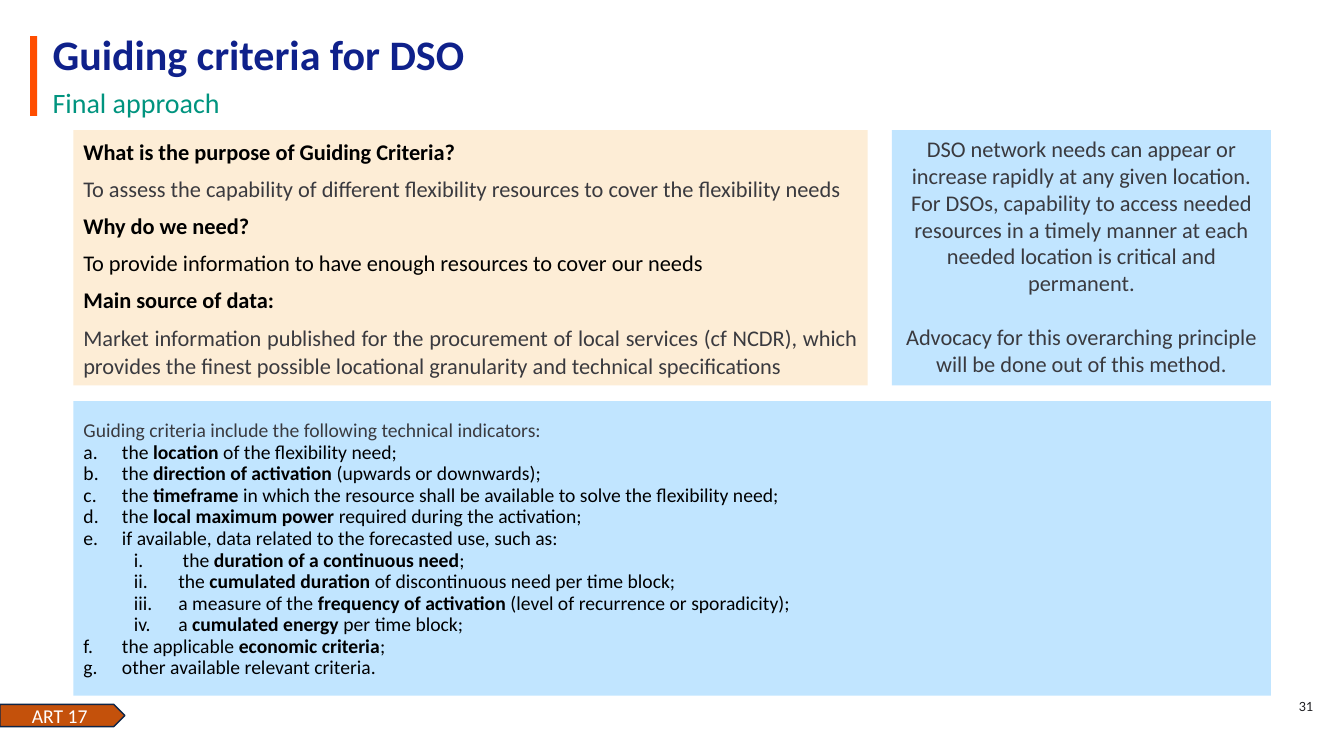
import pptx
import pptx.dml.color
import pptx.enum.shapes
import pptx.enum.text
import pptx.oxml
import pptx.oxml.ns
import pptx.util

Cm = pptx.util.Cm
Pt = pptx.util.Pt
Shape = pptx.enum.shapes.MSO_SHAPE
Align = pptx.enum.text.PP_ALIGN
Anchor = pptx.enum.text.MSO_ANCHOR

NAVY = "0F218B"
GREEN = "00947F"
GREY = "3A3A3F"
BLACK = "000000"
CREAM = "FDEDD6"
SKY = "C1E5FF"

PURPOSE = [
    ("*What is the purpose of Guiding Criteria?*", BLACK),
    ("To assess the capability of different flexibility resources to cover the flexibility needs", GREY),
    ("*Why do we need?*", BLACK),
    ("To provide information to have enough resources to cover our needs", BLACK),
    ("*Main source of data:*", BLACK),
    ("Market information published for the procurement of local services (cf NCDR), which provides "
     "the finest possible locational granularity and technical specifications", GREY),
]
NEEDS = [
    "DSO network needs can appear or increase rapidly at any given location.",
    "For DSOs, capability to access needed resources in a timely manner at each needed location "
    "is critical and permanent.",
    "Advocacy for this overarching principle will be done out of this method.",
]
INTRO = "Guiding criteria include the following technical indicators:"
ITEMS = [
    (0, "the *location* of the flexibility need;"),
    (0, "the *direction of activation* (upwards or downwards);"),
    (0, "the *timeframe* in which the resource shall be available to solve the flexibility need;"),
    (0, "the *local maximum power* required during the activation;"),
    (0, "if available, data related to the forecasted use, such as:"),
    (1, " the *duration of a continuous need*;"),
    (1, "the *cumulated duration* of discontinuous need per time block;"),
    (1, "a measure of the *frequency of activation* (level of recurrence or sporadicity);"),
    (1, "a *cumulated energy* per time block;"),
    (0, "the applicable *economic criteria*;"),
    (0, "other available relevant criteria."),
]
LEVELS = [("alphaLcPeriod", 0.97, -0.97), ("romanLcPeriod", 2.39, -1.12)]


def hue(code):
    return pptx.dml.color.RGBColor.from_string(code)


def place(shape, box):
    shape.left, shape.top, shape.width, shape.height = [Cm(n) for n in box]


def block(slide, kind, box, fill, line=None):
    shape = slide.shapes.add_shape(kind, *[Cm(n) for n in box])
    shape.shadow.inherit = False
    shape.fill.solid()
    shape.fill.fore_color.rgb = hue(fill)
    if line:
        shape.line.color.rgb = hue(line)
        shape.line.width = Pt(1)
    else:
        shape.line.fill.background()
    return shape


def setup(shape, anchor=Anchor.MIDDLE):
    frame = shape.text_frame
    frame.word_wrap = True
    frame.auto_size = pptx.enum.text.MSO_AUTO_SIZE.NONE
    frame.vertical_anchor = anchor
    return frame


def grow(frame, count):
    return [frame.paragraphs[0]] + [frame.add_paragraph() for _ in range(count - 1)]


def write(para, text, size, color, align=Align.LEFT, pitch=1.0, font="Calibri", bold=False):
    para.alignment = align
    para.line_spacing = pitch
    para.space_before = Pt(0)
    for spot, part in enumerate(text.split("*")):
        if part:
            run = para.add_run()
            run.text = part
            run.font.name = font
            run.font.size = Pt(size)
            run.font.bold = bold or spot % 2 == 1
            run.font.color.rgb = hue(color)


def mark(para, scheme=None, left=0, hang=0):
    props = para._p.get_or_add_pPr()
    props.set("marL", str(Cm(left)))
    props.set("indent", str(Cm(hang)))
    tag = "a:buAutoNum" if scheme else "a:buNone"
    node = pptx.oxml.parse_xml(f"<{tag} {pptx.oxml.ns.nsdecls('a')}/>")
    if scheme:
        node.set("type", scheme)
    props.append(node)


def header(slide, title, sub, box):
    left, top, width, height = box
    block(slide, Shape.RECTANGLE, (left, top, 0.18, height), "FF4D00")
    inner, span = left + 0.31, width - 0.31
    place(title, (inner, top + 0.03, span, 0.99))
    write(setup(title).paragraphs[0], "Guiding criteria for DSO", 30, NAVY, pitch=Pt(32), bold=True)
    place(sub, (inner, top + 1.02, span, 1.22))
    para = setup(sub).paragraphs[0]
    mark(para)
    write(para, "Final approach", 20, GREEN, pitch=Pt(26))


def purpose(slide, box):
    frame = setup(block(slide, Shape.RECTANGLE, box, CREAM))
    for para, (text, color) in zip(grow(frame, len(PURPOSE)), PURPOSE):
        write(para, text, 16, color, Align.JUSTIFY, 1.07)
        para.space_after = Pt(6)


def needs(slide, box):
    frame = setup(block(slide, Shape.RECTANGLE, box, SKY), Anchor.TOP)
    paras = grow(frame, len(NEEDS))
    for para, text in zip(paras, NEEDS):
        write(para, text, 16, GREY, Align.CENTER)
    paras[-1].space_before = Pt(19)


def criteria(body, box):
    place(body, box)
    body.fill.solid()
    body.fill.fore_color.rgb = hue(SKY)
    first, *rest = grow(setup(body), len(ITEMS) + 1)
    mark(first)
    write(first, INTRO, 14, GREY, Align.JUSTIFY)
    for para, (level, text) in zip(rest, ITEMS):
        para.level = level
        mark(para, *LEVELS[level])
        write(para, text, 14, BLACK, Align.JUSTIFY, Pt(15.4))


def footer(slide, box):
    left, top, width, height = box
    tag = block(slide, Shape.PENTAGON, (left, top + 0.6, 3.15, 0.56), "C4510B", "0E2548")
    write(setup(tag).paragraphs[0], "ART 17", 14, "FFFFFF", Align.CENTER)
    page = slide.shapes.add_textbox(Cm(left + width - 5), Cm(top + 0.17), Cm(5), Cm(1.02))
    write(setup(page).paragraphs[0], "31", 9, "1D1D20", Align.RIGHT, Pt(9), "Lato")


def main():
    deck = pptx.Presentation()
    deck.slide_width, deck.slide_height = Cm(33.87), Cm(19.05)
    slide = deck.slides.add_slide(deck.slide_layouts.get_by_name("Two Content"))
    title, sub, body = slide.placeholders
    left, top, width, height = 1.85, 3.28, 30.18, 6.43
    wide, gap = 20.02, 0.61
    header(slide, title, sub, (0.76, 0.91, 32.59, 2.01))
    purpose(slide, (left, top, wide, height))
    needs(slide, (left + wide + gap, top, width - wide - gap, height))
    criteria(body, (left, 10.11, width, 7.42))
    footer(slide, (0, 17.15, 33.35, 1.9))
    deck.save("out.pptx")


if __name__ == "__main__":
    main()
